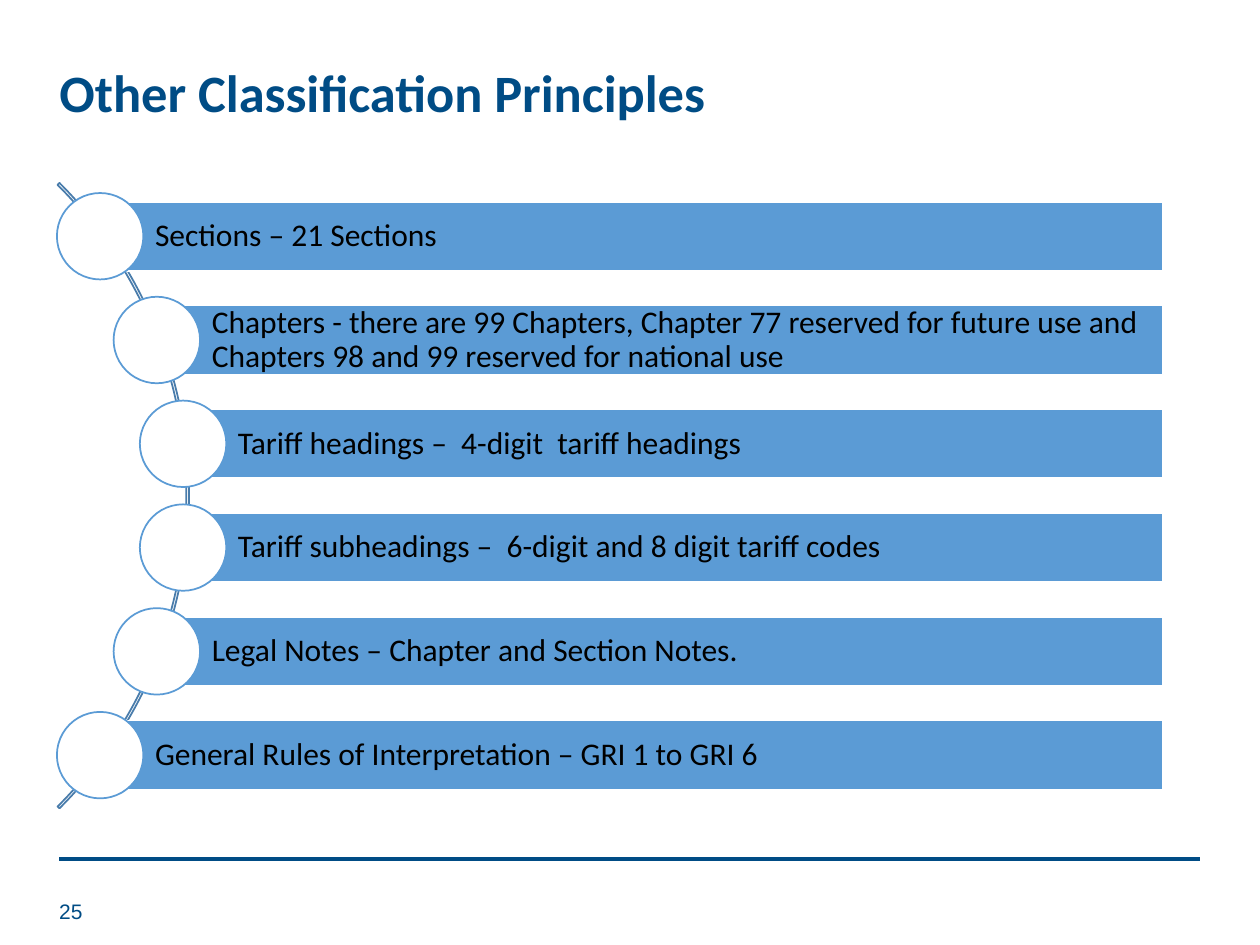
import pptx
import pptx.dml.color
import pptx.enum.shapes
import pptx.enum.text
import pptx.oxml.ns
import pptx.util
from lxml import etree

Pt = pptx.util.Pt
RGBColor = pptx.dml.color.RGBColor
Shape = pptx.enum.shapes.MSO_SHAPE
Anchor = pptx.enum.text.MSO_ANCHOR

NAVY = RGBColor(0x00, 0x4C, 0x85)
BLUE = RGBColor(0x5B, 0x9B, 0xD5)
ARC_BLUE = RGBColor(0x49, 0x7C, 0xAB)
WHITE = RGBColor(0xFF, 0xFF, 0xFF)
BLACK = RGBColor(0x00, 0x00, 0x00)

PRINCIPLES = [
    "Sections – 21 Sections",
    "Chapters - there are 99 Chapters, Chapter 77 reserved for future use and "
    "Chapters 98 and 99 reserved for national use",
    "Tariff headings –  4-digit  tariff headings",
    "Tariff subheadings –  6-digit and 8 digit tariff codes",
    "Legal Notes – Chapter and Section Notes.",
    "General Rules of Interpretation – GRI 1 to GRI 6",
]

# Bars start at the circle centres, which follow the arc symmetrically
UPPER_LEFTS = [57.2, 89.6, 104.6]
BAR_LEFTS = UPPER_LEFTS + UPPER_LEFTS[::-1]
BAR_RIGHT = 664.6
BAR_HEIGHT = 39.5
CIRCLE_SIZE = 49.4
FIRST_CENTER = 135
ROW_STEP = 59.3
ARC_SIZE = 505.4


def write_text(box, text, size=18, font="Calibri", color=BLACK, bold=False,
               spacing=1.0, anchor=Anchor.MIDDLE, insets=(7.2, 3.6, 7.2, 3.6)):
    frame = box.text_frame
    frame.word_wrap = True
    frame.auto_size = pptx.enum.text.MSO_AUTO_SIZE.NONE
    frame.vertical_anchor = anchor
    (frame.margin_left, frame.margin_top,
     frame.margin_right, frame.margin_bottom) = map(Pt, insets)
    para = frame.paragraphs[0]
    para.alignment = pptx.enum.text.PP_ALIGN.LEFT
    para.line_spacing = spacing
    para.space_before = Pt(0)
    span = para.add_run()
    span.text = text
    span.font.name = font
    span.font.size = Pt(size)
    span.font.bold = bold
    span.font.color.rgb = color


class SlideBuilder:
    def __init__(self, page):
        self.page = page

    def title(self, text, left, top, width, height):
        box = self.page.shapes.title
        box.left, box.top, box.width, box.height = map(
            Pt, (left, top, width, height))
        write_text(box, text, size=30, color=NAVY, bold=True, spacing=0.9,
                   anchor=Anchor.TOP)

    def label(self, text, left, top, width, height, **style):
        box = self.page.shapes.add_textbox(
            *map(Pt, (left, top, width, height)))
        write_text(box, text, **style)

    def shape(self, kind, left, top, width, height, line, fill=None):
        shape = self.page.shapes.add_shape(
            kind, *map(Pt, (left, top, width, height)))
        shape.shadow.inherit = False
        if fill is None:
            shape.fill.background()
        else:
            shape.fill.solid()
            shape.fill.fore_color.rgb = fill
        shape.line.color.rgb = line
        shape.line.width = Pt(1)
        return shape

    def rule(self, left, right, top):
        line = self.page.shapes.add_connector(
            pptx.enum.shapes.MSO_CONNECTOR.STRAIGHT,
            Pt(left), Pt(top), Pt(right), Pt(top))
        line.line.color.rgb = NAVY
        line.line.width = Pt(2)
        etree.SubElement(line._element.spPr,
                         pptx.oxml.ns.qn("a:effectLst"))

    def arc(self, left, top, size):
        arc = self.shape(Shape.BLOCK_ARC, left, top, size, size, ARC_BLUE)
        for index, value in enumerate((189, 27, 0.003)):
            arc.adjustments[index] = value

    def principle(self, text, left, center):
        bar = self.shape(Shape.RECTANGLE, left, center - BAR_HEIGHT / 2,
                         BAR_RIGHT - left, BAR_HEIGHT, WHITE, BLUE)
        write_text(bar, text, spacing=0.9, insets=(31.4, 3.6, 3.6, 3.6))
        radius = CIRCLE_SIZE / 2
        self.shape(Shape.OVAL, left - radius, center - radius,
                   CIRCLE_SIZE, CIRCLE_SIZE, BLUE, WHITE)


def main():
    deck = pptx.Presentation()
    deck.slide_width, deck.slide_height = Pt(720), Pt(540)
    builder = SlideBuilder(deck.slides.add_slide(deck.slide_layouts[5]))

    # Title, footer rule and page number
    builder.rule(34, 686, 491)
    builder.title("Other Classification Principles", 26.8, 34.6, 620.6, 41.8)
    builder.label("25", 26.8, 506.2, 33.1, 28.8,
                  size=12, font="Arial", color=NAVY)

    # Arc with one bar and circle per principle
    arc_center = FIRST_CENTER + ROW_STEP * (len(PRINCIPLES) - 1) / 2
    builder.arc(-397.4, arc_center - ARC_SIZE / 2, ARC_SIZE)
    for row, (text, left) in enumerate(zip(PRINCIPLES, BAR_LEFTS)):
        builder.principle(text, left, FIRST_CENTER + row * ROW_STEP)

    deck.save("out.pptx")


if __name__ == "__main__":
    main()
